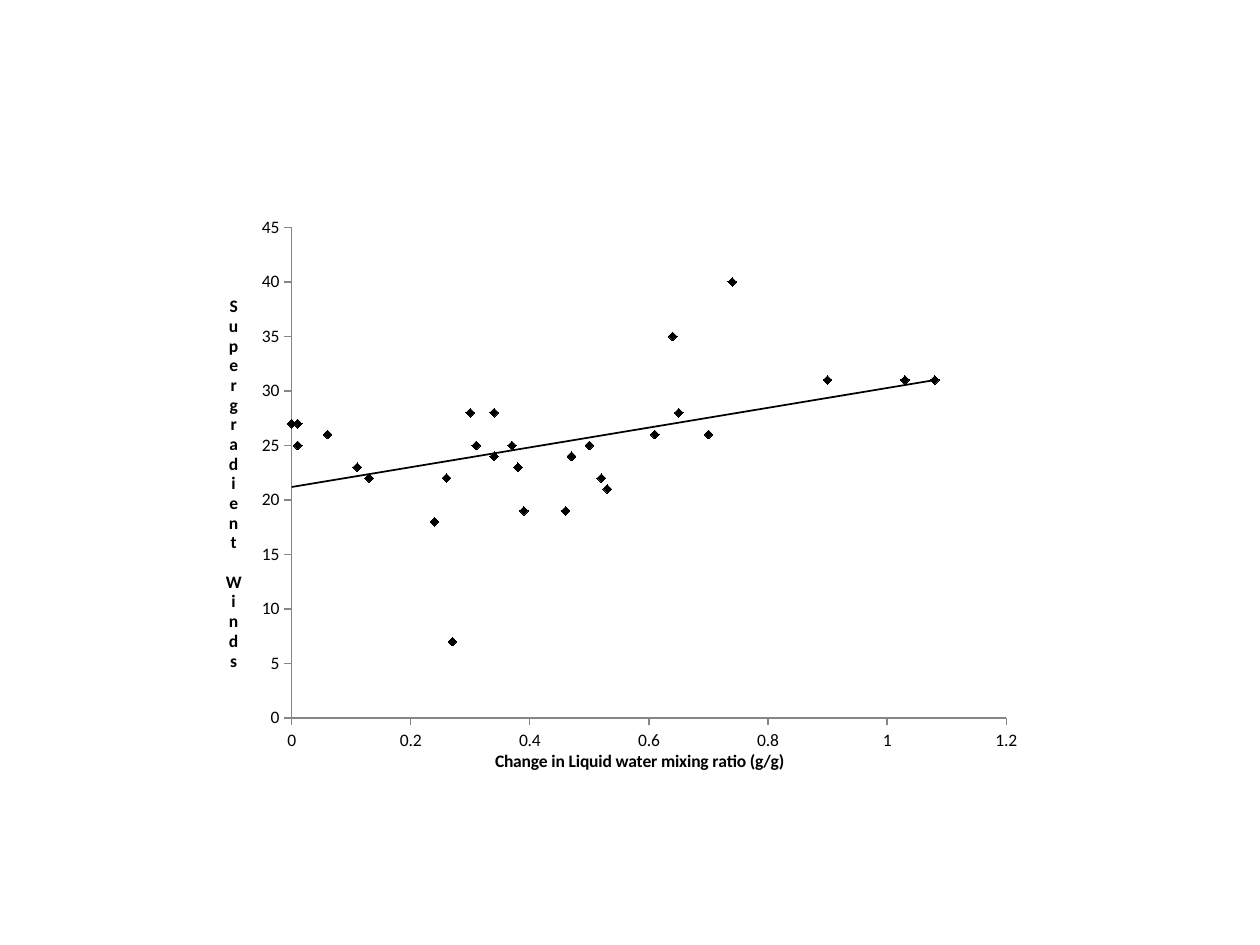
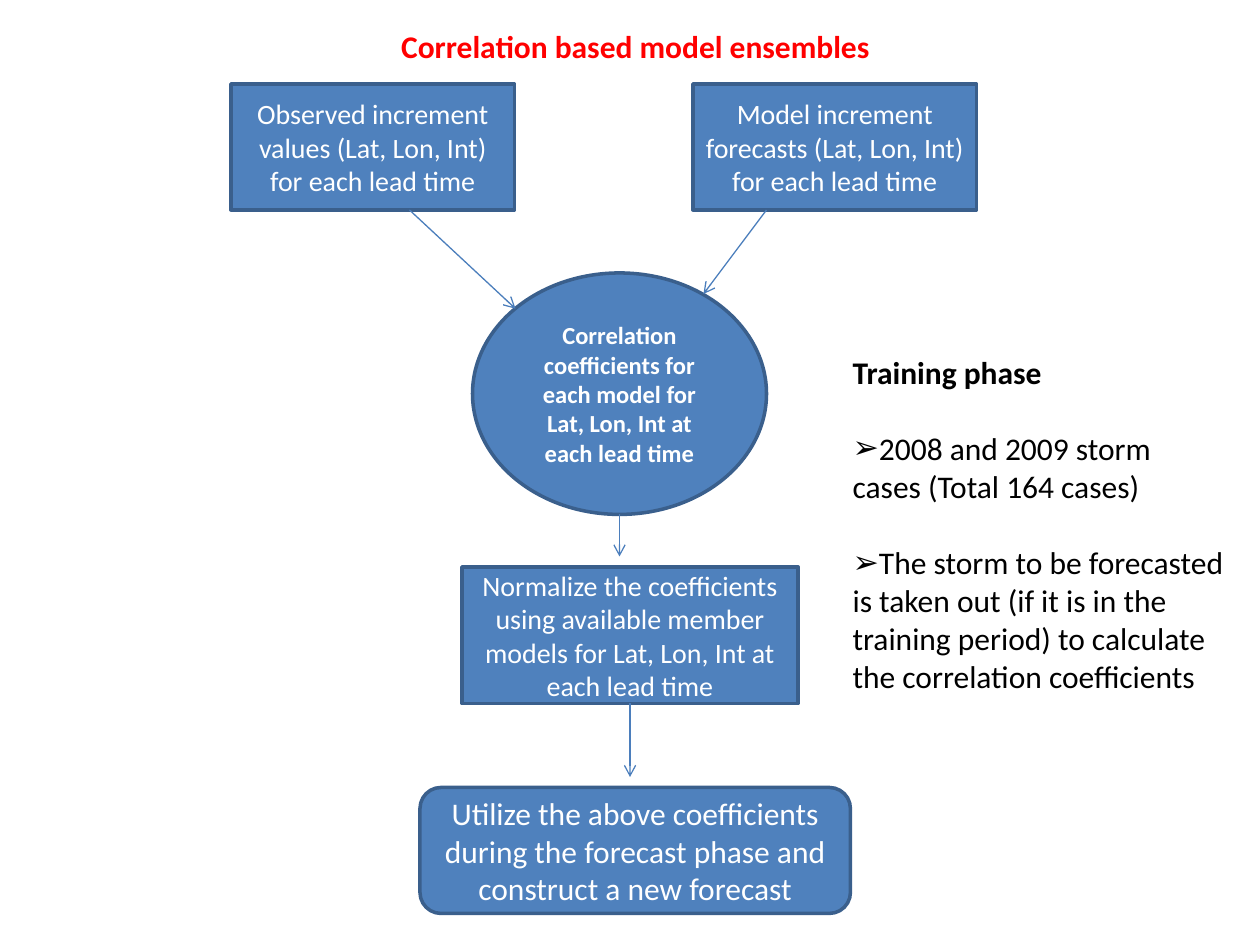
from lxml import etree
from pptx import Presentation
from pptx.chart.data import XyChartData
from pptx.dml.color import RGBColor
from pptx.enum.chart import XL_CHART_TYPE as CHART, XL_MARKER_STYLE as MARKER, XL_TICK_MARK as TICK
from pptx.enum.shapes import MSO_CONNECTOR as CONNECTOR, MSO_SHAPE as SHAPE
from pptx.enum.text import MSO_ANCHOR as ANCHOR, MSO_AUTO_SIZE as AUTO_SIZE, PP_ALIGN as ALIGN
from pptx.oxml import parse_xml
from pptx.oxml.ns import nsdecls, qn
from pptx.util import Emu, Pt

PX = 7620  # 120 px to the inch
FONT = "Calibri"
BLACK, WHITE, RED = "000000", "FFFFFF", "FF0000"
BOX_FILL, BOX_EDGE, ARROW, AXIS = "4F81BD", "3A5F8C", "4B7EBC", "868686"
TITLE_AND_CONTENT, BLANK = 1, 6

POINTS = [
    (0.34, 24), (0.38, 23), (0.27, 7), (0.26, 22), (0.13, 22), (0.47, 24),
    (0.3, 28), (1.03, 31), (0.24, 18), (0.65, 28), (1.08, 31), (0.64, 35),
    (0.61, 26), (0, 27), (0.34, 28), (0.52, 22), (0.53, 21), (0.01, 27),
    (0.39, 19), (0.5, 25), (0.01, 25), (0.74, 40), (0.9, 31), (0.06, 26),
    (0.7, 26), (0.37, 25), (0.11, 23), (0.47, 24), (0.31, 25), (0.46, 19),
]


def px(*lengths):
    return [Emu(length * PX) for length in lengths]


def color(hex_string):
    return RGBColor.from_string(hex_string)


def style_line(line, hex_string, width):
    line.color.rgb = color(hex_string)
    line.width = Pt(width)


def style_font(font, size, hex_string=BLACK, bold=False):
    font.name, font.size, font.bold = FONT, Pt(size), bold
    font.color.rgb = color(hex_string)


def write(para, text, size=18, hex_string=BLACK, bold=False, align=ALIGN.LEFT,
          before=0, bullet=None):
    para.alignment = align
    para.space_before = Pt(before)
    span = para.add_run()
    span.text = text
    style_font(span.font, size, hex_string, bold)
    settings = para._p.get_or_add_pPr()
    settings.set("marL", "0")
    settings.set("indent", "0")
    if bullet:
        etree.SubElement(settings, qn("a:buChar"), char=bullet)
    else:
        etree.SubElement(settings, qn("a:buNone"))


class SlideBuilder:
    """Holds the deck, the shared style and the slide being filled."""

    def __init__(self):
        self.deck = Presentation()
        self.deck.slide_width, self.deck.slide_height = px(1200, 900)
        self.page = None

    def new_page(self, layout):
        self.page = self.deck.slides.add_slide(self.deck.slide_layouts[layout])

    def frame(self, holder, left, top, width, height):
        """Moves a placeholder and returns its text frame, set from the top."""
        holder.left, holder.top, holder.width, holder.height = px(left, top, width, height)
        frame = holder.text_frame
        frame.word_wrap = True
        frame.auto_size = AUTO_SIZE.NONE
        frame.vertical_anchor = ANCHOR.TOP
        return frame

    def title(self, text, *place):
        frame = self.frame(self.page.shapes.title, *place)
        write(frame.paragraphs[0], text, hex_string=RED, bold=True)

    def body(self, heading, items, *place):
        frame = self.frame(self.page.placeholders[1], *place)
        write(frame.paragraphs[0], heading, bold=True)
        for item in items:
            write(frame.add_paragraph(), item, before=22, bullet="➢")

    def box(self, text, *place, kind=SHAPE.RECTANGLE, size=16, bold=False):
        box = self.page.shapes.add_shape(kind, *px(*place))
        box.shadow.inherit = False
        box.fill.solid()
        box.fill.fore_color.rgb = color(BOX_FILL)
        style_line(box.line, BOX_EDGE, 2)
        box.text_frame.word_wrap = True
        box.text_frame.vertical_anchor = ANCHOR.MIDDLE
        write(box.text_frame.paragraphs[0], text, size, WHITE, bold, ALIGN.CENTER)

    def arrow(self, *ends):
        arrow = self.page.shapes.add_connector(CONNECTOR.STRAIGHT, *px(*ends))
        style_line(arrow.line, ARROW, 0.75)
        etree.SubElement(arrow.line._get_or_add_ln(), qn("a:tailEnd"), type="arrow")
        etree.SubElement(arrow._element.spPr, qn("a:effectLst"))

    def axis(self, axis, title, maximum, step):
        axis.minimum_scale, axis.maximum_scale, axis.major_unit = 0, maximum, step
        axis.has_major_gridlines = False
        axis.major_tick_mark, axis.minor_tick_mark = TICK.OUTSIDE, TICK.NONE
        axis.tick_labels.number_format = "General"
        axis.tick_labels.number_format_is_linked = False
        style_font(axis.tick_labels.font, 10)
        style_line(axis.format.line, AXIS, 0.75)
        frame = axis.axis_title.text_frame
        span = frame.paragraphs[0].add_run()
        span.text = title
        style_font(span.font, 10, bold=True)
        return frame

    def scatter(self, points, x_title, y_title, *place):
        data = XyChartData()
        series_data = data.add_series("Series 1")
        for x, y in points:
            series_data.add_data_point(x, y)
        chart = self.page.shapes.add_chart(CHART.XY_SCATTER, *px(*place), data).chart
        chart.has_legend = chart.has_title = False
        style_font(chart.font, 10)
        chart.plots[0].vary_by_categories = False
        self.axis(chart.category_axis, x_title, 1.2, 0.2)
        y_frame = self.axis(chart.value_axis, y_title, 45, 5)
        y_frame._txBody.bodyPr.set("rot", "0")
        y_frame._txBody.bodyPr.set("vert", "wordArtVert")

        series = chart.plots[0].series[0]
        series.smooth = False
        series.format.line.fill.background()
        series.marker.style, series.marker.size = MARKER.DIAMOND, 5
        series.marker.format.fill.solid()
        series.marker.format.fill.fore_color.rgb = color(BLACK)
        style_line(series.marker.format.line, BLACK, 0.75)
        self.trend_line(series)
        self.plot_area(chart, x=0.154, y=0.113, w=0.82, h=0.792)

    def trend_line(self, series):
        trend = parse_xml(
            f'<c:trendline {nsdecls("c", "a")}><c:spPr><a:ln w="12700"><a:solidFill>'
            f'<a:srgbClr val="{BLACK}"/></a:solidFill></a:ln></c:spPr>'
            '<c:trendlineType val="linear"/><c:dispRSqr val="0"/><c:dispEq val="0"/>'
            '</c:trendline>')
        series._element.find(qn("c:xVal")).addprevious(trend)

    def plot_area(self, chart, **shares):
        """Fixes the inner plot area, in shares of the chart's size."""
        area = chart._chartSpace.chart.plotArea
        for old in area.findall(qn("c:layout")):
            area.remove(old)
        layout = etree.Element(qn("c:layout"))
        area.insert(0, layout)
        manual = etree.SubElement(layout, qn("c:manualLayout"))
        settings = {"layoutTarget": "inner", "xMode": "edge", "yMode": "edge", **shares}
        for name, value in settings.items():
            etree.SubElement(manual, qn(f"c:{name}"), val=str(value))


def add_wind_chart(builder):
    builder.new_page(BLANK)
    builder.scatter(POINTS, "Change in Liquid water mixing ratio (g/g)",
                    "Supergradient Winds", 150, 150, 830, 590)


def add_ensemble_flow(builder):
    builder.new_page(TITLE_AND_CONTENT)
    builder.title("Correlation based model ensembles", 370, 20, 560, 48)
    builder.box("Observed increment values (Lat, Lon, Int) for each lead time",
                220, 80, 270, 120)
    builder.box("Model increment forecasts (Lat, Lon, Int) for each lead time",
                660, 80, 270, 120)
    builder.box("Correlation coefficients for each model for Lat, Lon, Int at each lead time",
                450, 260, 280, 230, kind=SHAPE.OVAL, size=14, bold=True)
    builder.box("Normalize the coefficients using available member models "
                "for Lat, Lon, Int at each lead time", 440, 540, 320, 130)
    builder.box("Utilize the above coefficients during the forecast phase "
                "and construct a new forecast",
                400, 750, 410, 120, kind=SHAPE.ROUNDED_RECTANGLE, size=18)
    for ends in [(730, 200, 670, 280), (390, 200, 491, 294),
                 (590, 490, 590, 530), (600, 670, 600, 740)]:
        builder.arrow(*ends)
    builder.body("Training phase",
                 ["2008 and 2009 storm cases (Total 164 cases)",
                  "The storm to be forecasted is taken out (if it is in the training "
                  "period) to calculate the correlation coefficients"],
                 800, 330, 380, 340)


def main():
    builder = SlideBuilder()
    add_wind_chart(builder)
    add_ensemble_flow(builder)
    builder.deck.save("out.pptx")


if __name__ == "__main__":
    main()
